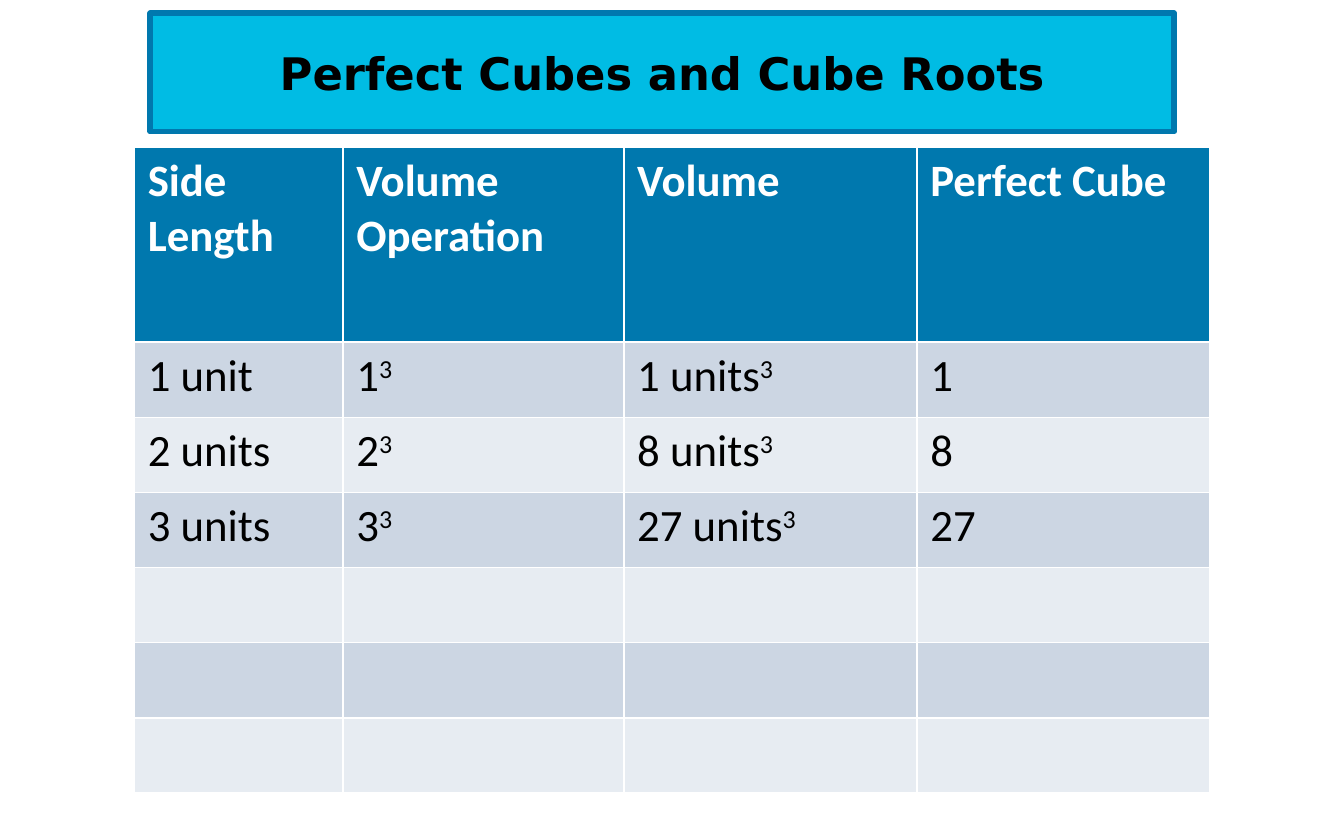
"""Build a slide with a table of perfect cubes."""
from typing import NamedTuple

from pptx import Presentation
from pptx.dml.color import RGBColor
from pptx.enum.text import MSO_ANCHOR, PP_ALIGN
from pptx.util import Cm, Pt

CENTER = PP_ALIGN.CENTER
MIDDLE = MSO_ANCHOR.MIDDLE
BLACK = RGBColor(0x00, 0x00, 0x00)
WHITE = RGBColor(0xFF, 0xFF, 0xFF)
CYAN = RGBColor(0x00, 0xBC, 0xE4)
BLUE = RGBColor(0x00, 0x78, 0xAE)
DARK = RGBColor(0xCC, 0xD6, 0xE3)
LIGHT = RGBColor(0xE7, 0xEC, 0xF2)
TITLE_ONLY = 5
WIDTHS = (3.94, 5.31, 5.54, 5.54)
HEAD_HEIGHT = 3.68
ROW_HEIGHT = 1.42
SIDES = 3
BLANKS = 3


class Row(NamedTuple):
    texts: tuple[str, ...]
    fill: RGBColor
    color: RGBColor
    bold: bool
    height: float


def set_font(para, name: str, color: RGBColor, bold: bool) -> None:
    """Format all text of a paragraph."""
    font = para.font
    font.name, font.size, font.bold = name, Pt(24), bold
    font.color.rgb = color


def add_title(slide, text: str) -> None:
    """Turn the title placeholder into a framed banner."""
    title = slide.shapes.title
    title.left, title.top = Cm(2.84), Cm(0.25)
    title.width, title.height = Cm(19.35), Cm(2.24)
    title.fill.solid()
    title.fill.fore_color.rgb = CYAN
    title.line.color.rgb = BLUE
    title.line.width = Pt(3)
    frame = title.text_frame
    frame.text = text
    frame.vertical_anchor = MIDDLE
    para = frame.paragraphs[0]
    para.alignment = CENTER
    set_font(para, "DejaVu Sans", BLACK, True)


def fill_cell(cell, text: str, row: Row) -> None:
    """Fill a cell, raising what follows a caret."""
    cell.fill.solid()
    cell.fill.fore_color.rgb = row.fill
    para = cell.text_frame.paragraphs[0]
    set_font(para, "Calibri", row.color, row.bold)
    base, _, power = text.partition("^")
    if base:
        para.add_run().text = base
    if power:
        run = para.add_run()
        run.text = power
        run._r.get_or_add_rPr().set("baseline", "30000")


def make_rows() -> list[Row]:
    """List the heading, the worked cubes and the blank rows."""
    heads = ("Side Length", "Volume Operation", "Volume", "Perfect Cube")
    rows = [Row(heads, BLUE, WHITE, True, HEAD_HEIGHT)]
    for side in range(1, SIDES + BLANKS + 1):
        cube = side ** 3
        unit = "unit" if side == 1 else "units"
        texts = (f"{side} {unit}", f"{side}^3", f"{cube} units^3", f"{cube}")
        if side > SIDES:
            texts = ("",) * len(WIDTHS)
        fill = DARK if side % 2 else LIGHT
        rows.append(Row(texts, fill, BLACK, False, ROW_HEIGHT))
    return rows


def add_grid(slide, rows: list[Row]) -> None:
    """Draw the table of cubes."""
    height = sum(row.height for row in rows)
    table = slide.shapes.add_table(
        len(rows), len(WIDTHS), Cm(2.54), Cm(2.79), Cm(sum(WIDTHS)), Cm(height)
    ).table
    for column, width in zip(table.columns, WIDTHS):
        column.width = Cm(width)
    for line, row in zip(table.rows, rows):
        line.height = Cm(row.height)
        for cell, text in zip(line.cells, row.texts):
            fill_cell(cell, text, row)


def main() -> None:
    """Build and save the slide."""
    deck = Presentation()
    deck.slide_width, deck.slide_height = Cm(25.4), Cm(15.88)
    slide = deck.slides.add_slide(deck.slide_layouts[TITLE_ONLY])
    add_title(slide, "Perfect Cubes and Cube Roots")
    add_grid(slide, make_rows())
    deck.save("out.pptx")


if __name__ == "__main__":
    main()
